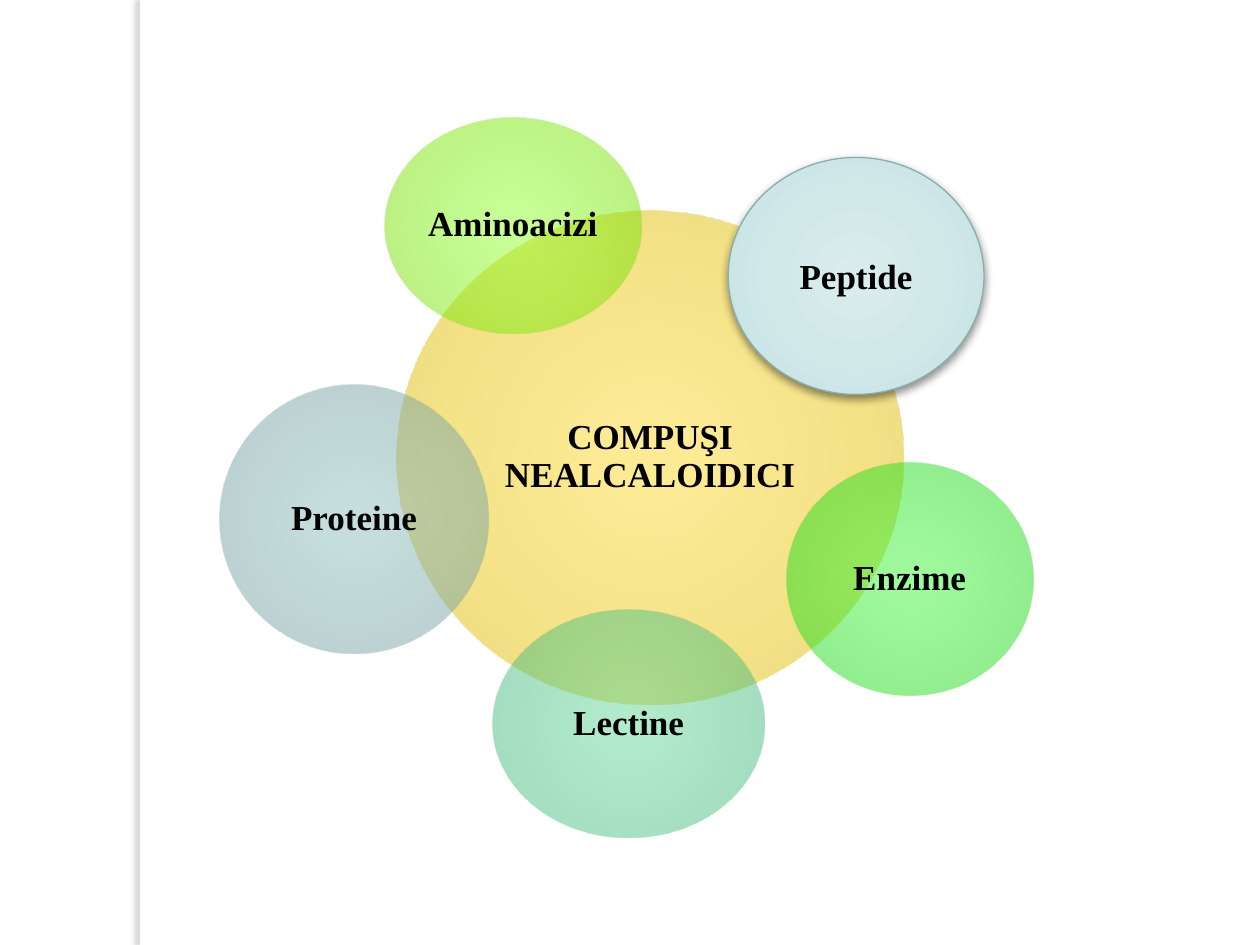
from lxml import etree
from pptx import Presentation
from pptx import util as u
from pptx.dml.color import RGBColor
from pptx.enum import shapes, text
from pptx.oxml.ns import qn

WHITE = RGBColor(0xFF, 0xFF, 0xFF)
BLACK = RGBColor(0, 0, 0)
STRIP_SHADOW = RGBColor(0x61, 0x68, 0x6B)
PEPTIDE_LINE = RGBColor(0x8C, 0xAD, 0xAE)
FONT = "Times New Roman"

GLOW_POSITIONS = (0, 15, 62, 97, 100)
# label, (left, top, width, height), gradient colours from centre to rim
CIRCLES = [
    ("COMPUŞI NEALCALOIDICI", (3.15, 1.67, 4.02, 3.92),
     ("FCD82A", "FBD72A", "E9C60C", "CEB000", "A69200")),
    ("Aminoacizi", (3.05, 0.93, 2.04, 1.72),
     ("90FF2C", "8FFF2B", "7EEC0E", "71D400", "6DBC00")),
    ("Enzime", (6.24, 3.67, 1.96, 1.85),
     ("3FF73A", "3FF63A", "27E221", "19CE12", "0CCF04")),
    ("Lectine", (3.91, 4.84, 2.16, 1.81),
     ("63D99A", "63D899", "4EC487", "41B077", "3AAF74")),
    ("Proteine", (1.74, 3.05, 2.14, 2.14),
     ("90BFC0", "8FBEBF", "7CAAAC", "6C9899", "689697")),
]
PEPTIDE = ("Peptide", (5.78, 1.25, 2.03, 1.88),
           ("DAECEC", "D1E8E9", "C3E2E3", "BEE1E2"))
PEPTIDE_POSITIONS = (0, 50, 97, 100)


def add_child(parent, tag, **attributes):
    values = {name: str(value) for name, value in attributes.items()}
    return etree.SubElement(parent, qn(tag), values)


def add_plain_shape(slide, kind, box):
    shape = slide.shapes.add_shape(kind, *map(u.Inches, box))
    shape.shadow.inherit = False
    shape.line.fill.background()
    return shape


def fill_radial(shape, positions, colors, opacity=100):
    shape.fill.background()
    properties = shape.element.spPr
    empty_fill = properties.find(qn("a:noFill"))
    gradient = etree.Element(qn("a:gradFill"), rotWithShape="1")
    stops = add_child(gradient, "a:gsLst")
    for position, color in zip(positions, colors):
        stop = add_child(stops, "a:gs", pos=position * 1000)
        color_element = add_child(stop, "a:srgbClr", val=color)
        if opacity < 100:
            add_child(color_element, "a:alpha", val=opacity * 1000)
    circle = add_child(gradient, "a:path", path="circle")
    add_child(circle, "a:fillToRect", l=50000, t=50000, r=50000, b=50000)
    properties.replace(empty_fill, gradient)


def add_shadow(shape, color, opacity, blur, distance, degrees):
    effects = shape.element.spPr.find(qn("a:effectLst"))
    shadow = add_child(effects, "a:outerShdw", blurRad=u.Pt(blur), dist=u.Pt(distance),
                       dir=degrees * 60000, algn="ctr", rotWithShape=0)
    color_element = add_child(shadow, "a:srgbClr", val=color)
    add_child(color_element, "a:alpha", val=opacity * 1000)


def write_text(shape, content, size=20, color=BLACK, bold=True, spacing=0.9, inset=0.03):
    frame = shape.text_frame
    frame.word_wrap = True
    frame.vertical_anchor = text.MSO_ANCHOR.MIDDLE
    frame.margin_left = frame.margin_right = u.Inches(inset)
    frame.margin_top = frame.margin_bottom = u.Inches(inset)
    paragraph = frame.paragraphs[0]
    paragraph.alignment = text.PP_ALIGN.CENTER
    paragraph.line_spacing = spacing
    run = paragraph.add_run()
    run.text = content
    run.font.name = FONT
    run.font.size = u.Pt(size)
    run.font.bold = bold
    run.font.color.rgb = color


def main():
    presentation = Presentation()
    presentation.slide_width = u.Inches(10)
    presentation.slide_height = u.Inches(7.5)
    slide = presentation.slides.add_slide(presentation.slide_layouts[6])

    strip = add_plain_shape(slide, shapes.MSO_SHAPE.RECTANGLE, (1.11, 0, 0.08, 7.5))
    strip.fill.solid()
    strip.fill.fore_color.rgb = WHITE
    add_shadow(strip, STRIP_SHADOW, opacity=25, blur=3, distance=3, degrees=180)

    for label, box, colors in CIRCLES:
        circle = add_plain_shape(slide, shapes.MSO_SHAPE.OVAL, box)
        fill_radial(circle, GLOW_POSITIONS, colors, opacity=50)
        write_text(circle, label)

    label, box, colors = PEPTIDE
    peptide = add_plain_shape(slide, shapes.MSO_SHAPE.OVAL, box)
    fill_radial(peptide, PEPTIDE_POSITIONS, colors)
    peptide.line.color.rgb = PEPTIDE_LINE
    peptide.line.width = u.Pt(0.75)
    add_shadow(peptide, BLACK, opacity=43, blur=5, distance=2, degrees=90)
    write_text(peptide, label, spacing=1.0, inset=0.05)

    presentation.save("out.pptx")


if __name__ == "__main__":
    main()
